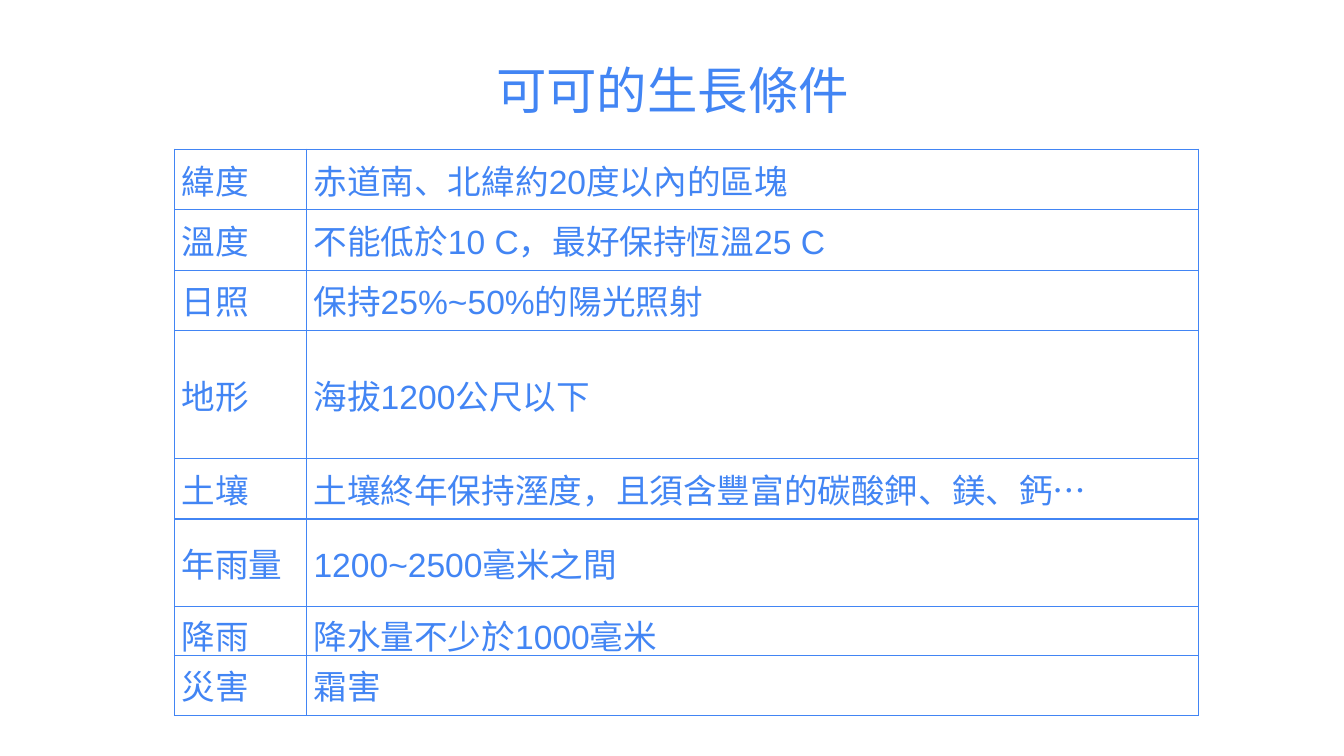
from lxml import etree
from pptx import Presentation
from pptx import util as u
from pptx.dml import color
from pptx.enum import text
from pptx.oxml import ns

BLUE = "4285F4"
CONDITIONS = [
    ("緯度", "赤道南、北緯約20度以內的區塊", 0.6),
    ("溫度", "不能低於10 C，最好保持恆溫25 C", 0.6),
    ("日照", "保持25%~50%的陽光照射", 0.6),
    ("地形", "海拔1200公尺以下", 1.27),
    ("土壤", "土壤終年保持溼度，且須含豐富的碳酸鉀、鎂、鈣…", 0.6),
    ("年雨量", "1200~2500毫米之間", 0.87),
    ("降雨", "降水量不少於1000毫米", 0.47),
    ("災害", "霜害", 0.6),
]


def rgb(value):
    return color.RGBColor.from_string(value)


class SlideWriter:
    """Draws text and tables on one slide in a single colour."""

    def __init__(self, slide, ink):
        self.slide = slide
        self.ink = ink

    def style(self, paragraph, size, face):
        paragraph.font.size = u.Pt(size)
        paragraph.font.name = face
        paragraph.font.color.rgb = rgb(self.ink)

    def title(self, words, left, top, width, height):
        box = self.slide.shapes.add_textbox(*map(u.Inches, (left, top, width, height)))
        frame = box.text_frame
        frame.word_wrap = True
        frame.vertical_anchor = text.MSO_ANCHOR.BOTTOM
        heading = frame.paragraphs[0]
        heading.text = words
        heading.alignment = text.PP_ALIGN.CENTER
        heading.line_spacing = 0.85
        self.style(heading, 36, "Calibri")

    def border(self, cell):
        properties = cell._tc.get_or_add_tcPr()
        for side in ("a:lnL", "a:lnR", "a:lnT", "a:lnB"):
            line = etree.SubElement(properties, ns.qn(side), w=str(u.Pt(1)))
            fill = etree.SubElement(line, ns.qn("a:solidFill"))
            etree.SubElement(fill, ns.qn("a:srgbClr"), val=self.ink)

    def cell(self, cell, words):
        cell.text = words
        cell.vertical_anchor = text.MSO_ANCHOR.MIDDLE
        cell.margin_left = cell.margin_right = u.Inches(0.07)
        cell.margin_top = cell.margin_bottom = u.Inches(0.04)
        self.style(cell.text_frame.paragraphs[0], 24, "Arial")
        self.border(cell)
        cell.fill.background()

    def table(self, rows, left, top, widths):
        height = sum(row[-1] for row in rows)
        frame = self.slide.shapes.add_table(
            len(rows), len(widths), *map(u.Inches, (left, top, sum(widths), height)))
        grid = frame.table
        grid.first_row = grid.horz_banding = False
        for column, width in zip(grid.columns, widths):
            column.width = u.Inches(width)
        for line, (*entries, row_height) in zip(grid.rows, rows):
            line.height = u.Inches(row_height)
            for cell, words in zip(line.cells, entries):
                self.cell(cell, words)


def main():
    deck = Presentation()
    deck.slide_width, deck.slide_height = u.Inches(13.33), u.Inches(7.5)
    writer = SlideWriter(deck.slides.add_slide(deck.slide_layouts[6]), BLUE)
    writer.title("可可的生長條件", 3.43, 0.25, 6.48, 0.99)
    writer.table(CONDITIONS, 1.73, 1.48, (1.31, 8.85))
    deck.save("out.pptx")


if __name__ == "__main__":
    main()
